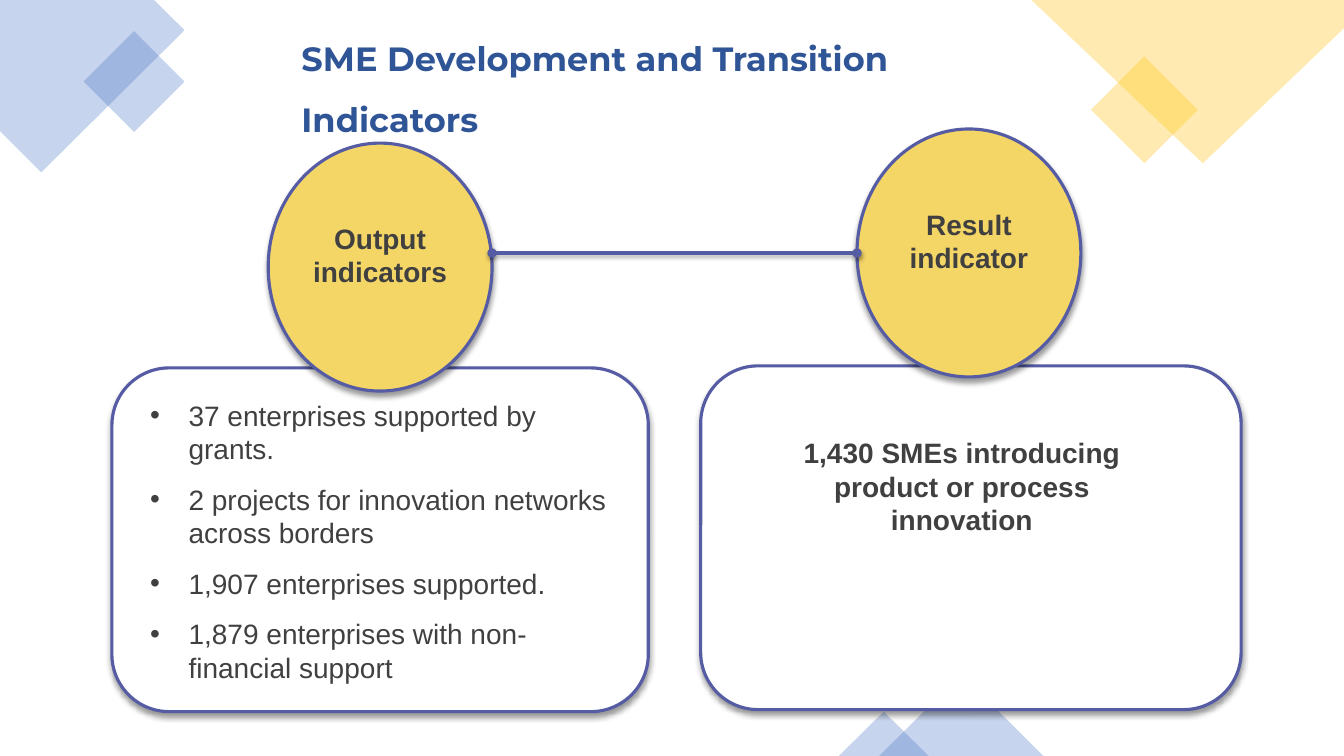
from lxml.etree import SubElement
from pptx import Presentation
from pptx.dml.color import RGBColor
from pptx.enum.shapes import MSO_CONNECTOR, MSO_SHAPE
from pptx.enum.text import MSO_ANCHOR, MSO_AUTO_SIZE, PP_ALIGN
from pptx.oxml.ns import qn
from pptx.util import Pt

PX = 9144  # EMU per px, 100 px to the inch

BLUE = RGBColor(0x44, 0x72, 0xC4)
GOLD = RGBColor(0xFF, 0xC0, 0x00)
NAVY = RGBColor(0x2F, 0x55, 0x97)
EDGE = RGBColor(0x55, 0x5C, 0xA4)
SUN = RGBColor(0xF4, 0xD6, 0x67)
WHITE = RGBColor(0xFF, 0xFF, 0xFF)
INK = RGBColor(0x40, 0x40, 0x40)

POINTS = [
    "37 enterprises supported by grants.",
    "2 projects for innovation networks across borders",
    "1,907 enterprises supported.",
    "1,879 enterprises with non-financial support",
]


def px(*sizes):
    return [size * PX for size in sizes]


def place(shape, box):
    shape.left, shape.top, shape.width, shape.height = px(*box)


def tint(shape, color):
    """Fill a background shape with 30% of a colour and no outline."""
    shape.shadow.inherit = False
    shape.line.fill.background()
    shape.fill.solid()
    shape.fill.fore_color.rgb = color
    clr = next(shape.element.spPr.iter(qn("a:srgbClr")))
    SubElement(clr, qn("a:alpha"), val="30000")


def add_deco(slide, kind, box, color):
    tint(slide.shapes.add_shape(kind, *px(*box)), color)


def add_corner(slide, dots, color):
    pen = slide.shapes.build_freeform(*dots[0], scale=PX)
    pen.add_line_segments(dots[1:], close=True)
    tint(pen.convert_to_shape(), color)


def outline(shape):
    shape.line.color.rgb = EDGE
    shape.line.width = Pt(2.25)


def add_shadow(shape, blur, dist, alpha):
    props = shape.element.spPr
    list_el = props.find(qn("a:effectLst"))
    if list_el is None:
        list_el = SubElement(props, qn("a:effectLst"))
    drop = SubElement(list_el, qn("a:outerShdw"), blurRad=str(Pt(blur)),
                      dist=str(Pt(dist)), dir="5400000", rotWithShape="0")
    clr = SubElement(drop, qn("a:srgbClr"), val="000000")
    SubElement(clr, qn("a:alpha"), val=str(alpha * 1000))


def add_panel(slide, kind, box, color):
    shape = slide.shapes.add_shape(kind, *px(*box))
    shape.shadow.inherit = False
    shape.fill.solid()
    shape.fill.fore_color.rgb = color
    outline(shape)
    add_shadow(shape, 4, 3, 40)
    return shape


def style(para, size, color, bold, name="Arial"):
    font = para.font
    font.name, font.size, font.bold = name, Pt(size), bold
    font.color.rgb = color


def add_circle(slide, box, text):
    frame = add_panel(slide, MSO_SHAPE.OVAL, box, SUN).text_frame
    frame.margin_left = frame.margin_top = frame.margin_right = 0
    frame.margin_bottom = 24 * PX
    frame.vertical_anchor = MSO_ANCHOR.MIDDLE
    write_bold(frame, text)


def write_bold(frame, text):
    frame.word_wrap = True
    para = frame.paragraphs[0]
    para.text = text
    para.alignment = PP_ALIGN.CENTER
    style(para, 20, INK, True)


def add_link(slide, ends):
    link = slide.shapes.add_connector(MSO_CONNECTOR.STRAIGHT, *px(*ends))
    outline(link)
    line = link.line.fill and link.element.spPr.find(qn("a:ln"))
    for tag in ("a:headEnd", "a:tailEnd"):
        SubElement(line, qn(tag), type="oval")
    add_shadow(link, 3.1, 1.6, 38)


def set_title(title, box, lines):
    place(title, box)
    frame = title.text_frame
    frame.text = "\n".join(lines)
    frame.auto_size = MSO_AUTO_SIZE.NONE
    frame.vertical_anchor = MSO_ANCHOR.TOP
    for para in frame.paragraphs:
        para.alignment = PP_ALIGN.LEFT
        para.line_spacing = 1.5
        style(para, 24, NAVY, True, "Montserrat")


def set_list(body, box, items):
    place(body, box)
    # Bring the list in front of its card
    body.element.getparent().append(body.element)
    frame = body.text_frame
    frame.text = "\n".join(items)
    frame.auto_size = MSO_AUTO_SIZE.NONE
    for para in frame.paragraphs:
        para.space_before, para.space_after = Pt(0), Pt(12)
        props = para._p.get_or_add_pPr()
        props.set("marL", str(38 * PX))
        props.set("indent", str(-38 * PX))
        SubElement(props, qn("a:buChar"), char="•")
        style(para, 20, INK, False)


def main():
    deck = Presentation()
    deck.slide_width, deck.slide_height = px(1333, 750)
    slide = deck.slides.add_slide(deck.slide_layouts[1])
    title, body = slide.placeholders

    # Background corners, diamonds and peaks
    add_corner(slide, [(0, 0), (153, 0), (183, 30), (41, 171), (0, 130)], BLUE)
    add_deco(slide, MSO_SHAPE.DIAMOND, (83, 31, 100, 100), BLUE)
    add_deco(slide, MSO_SHAPE.DIAMOND, (1082, 56, 106, 106), GOLD)
    add_corner(slide, [(1023, 0), (1333, 0), (1333, 28), (1193, 162)], GOLD)
    for box in ((872, 669, 163, 81), (832, 706, 89, 44)):
        add_deco(slide, MSO_SHAPE.ISOSCELES_TRIANGLE, box, BLUE)

    # Title
    set_title(title, (289, 13, 1044, 125),
              ["SME Development and Transition", "Indicators"])

    # Cards, circles and the line between them
    for box in ((111, 365, 532, 341), (695, 363, 536, 341)):
        add_panel(slide, MSO_SHAPE.ROUNDED_RECTANGLE, box, WHITE)
    add_circle(slide, (850, 128, 222, 246), "Result indicator")
    add_circle(slide, (266, 142, 222, 246), "Output indicators")
    add_link(slide, (488, 251, 850, 251))

    # Card texts
    set_list(body, (139, 390, 489, 296), POINTS)
    note = slide.shapes.add_textbox(*px(770, 427, 368, 111))
    write_bold(note.text_frame,
               "1,430 SMEs introducing product or process innovation")

    deck.save("out.pptx")


if __name__ == "__main__":
    main()
